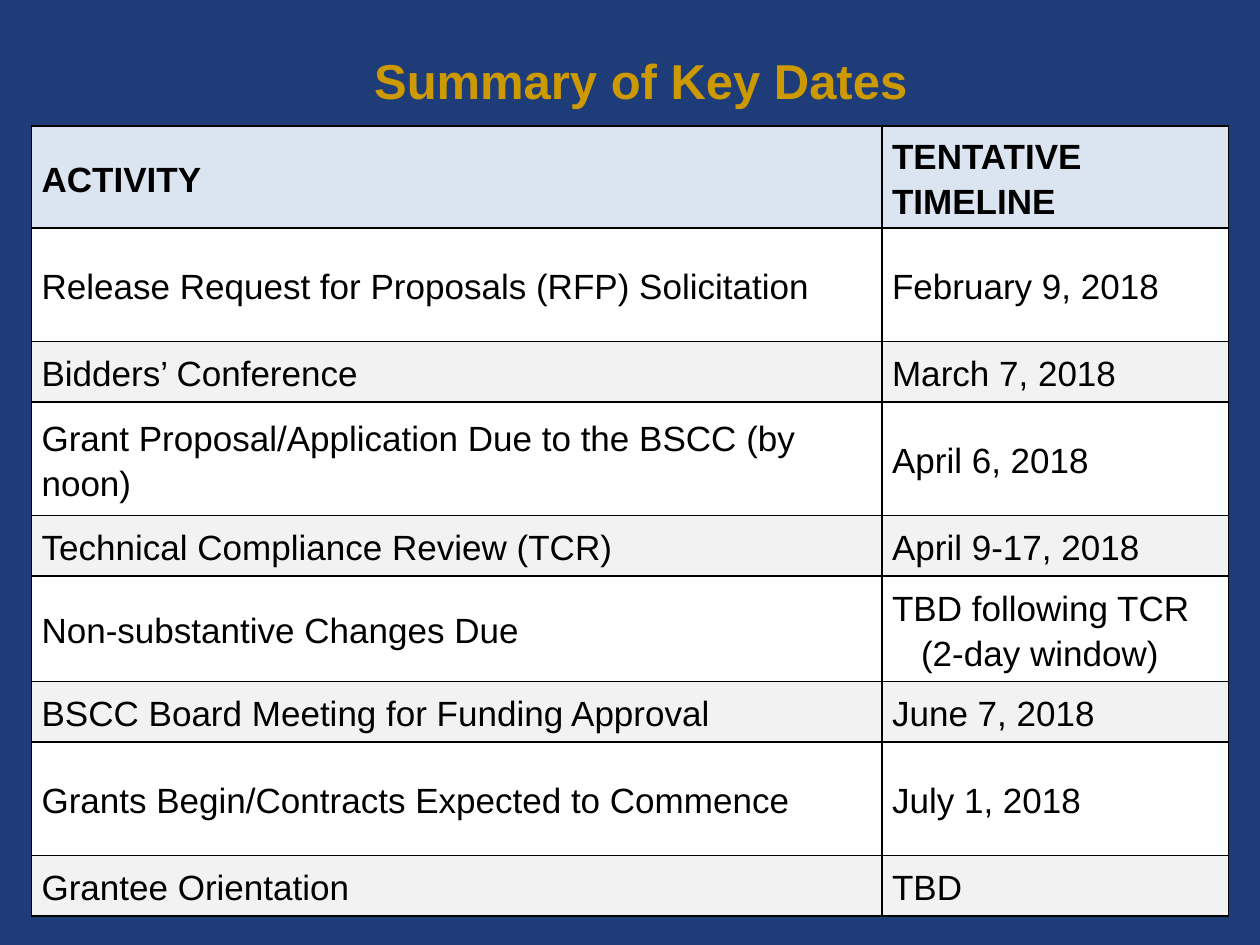
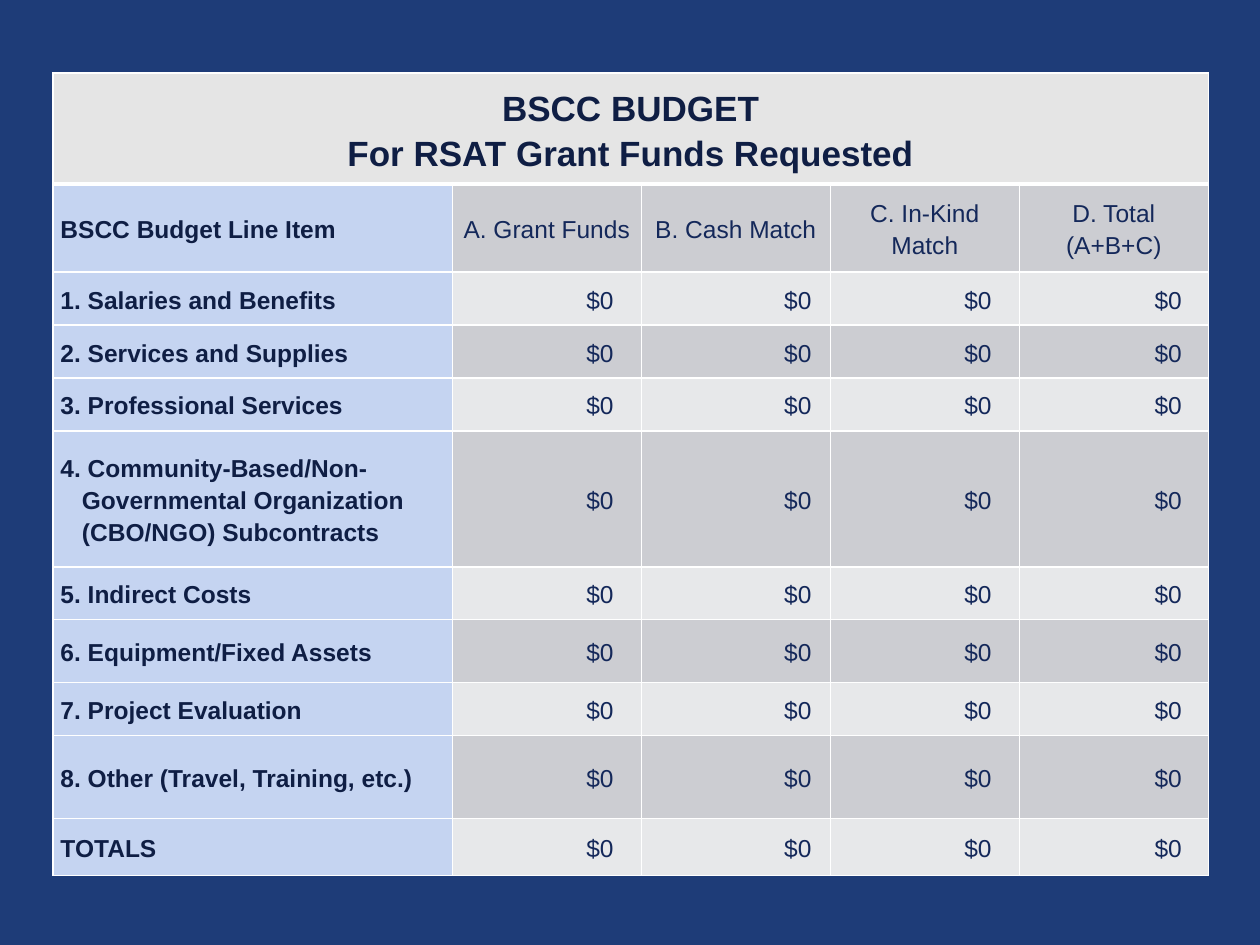
"""Build two slides: a table of key dates and a budget table."""
from lxml import etree
from pptx import Presentation
from pptx.dml.color import RGBColor
from pptx.enum import text
from pptx.oxml import ns
from pptx.util import Inches, Pt

COLORS = {
    "background": "1E3C78", "title": "CC9900", "black": "000000", "white": "FFFFFF",
    "date_head": "DBE5F1", "date_band": "F2F2F2",
    "budget_head": "E5E5E5", "item": "C5D4F1", "dark_band": "CCCDD2",
    "light_band": "E7E8EA", "navy": "0F1E44", "blue": "14285A",
}
FONT = "Arial"
LEFT, CENTER, RIGHT, JUSTIFY = (
    text.PP_ALIGN.LEFT, text.PP_ALIGN.CENTER, text.PP_ALIGN.RIGHT, text.PP_ALIGN.JUSTIFY)

DATES_TITLE = "Summary of Key Dates"
DATES = [
    ("ACTIVITY", "TENTATIVE TIMELINE"),
    ("Release Request for Proposals (RFP) Solicitation", "February 9, 2018"),
    ("Bidders’ Conference", "March 7, 2018"),
    ("Grant Proposal/Application Due to the BSCC (by noon)", "April 6, 2018"),
    ("Technical Compliance Review (TCR)", "April 9-17, 2018"),
    ("Non-substantive Changes Due", "TBD following TCR\n(2-day window)"),
    ("BSCC Board Meeting for Funding Approval", "June 7, 2018"),
    ("Grants Begin/Contracts Expected to Commence", "July 1, 2018"),
    ("Grantee Orientation", "TBD"),
]
DATE_WIDTHS = [6.75, 2.75]
DATE_HEIGHTS = [0.81, 0.9, 0.48, 0.9, 0.48, 0.84, 0.48, 0.9, 0.48]

BUDGET_TITLE = "BSCC BUDGET\nFor RSAT Grant Funds Requested"
BUDGET_HEADS = ["BSCC Budget Line Item", "A. Grant Funds", "B. Cash Match",
                "C. In-Kind Match", "D. Total (A+B+C)"]
BUDGET_ITEMS = [
    "1. Salaries and Benefits",
    "2. Services and Supplies",
    "3. Professional Services",
    "4. Community-Based/Non-Governmental Organization (CBO/NGO) Subcontracts",
    "5. Indirect Costs",
    "6. Equipment/Fixed Assets",
    "7. Project Evaluation",
    "8. Other (Travel, Training, etc.)",
    "TOTALS",
]
AMOUNT = "$0"
WRAPPED_ITEM = 4
BUDGET_WIDTHS = [3.17] + [1.5] * 4
BUDGET_HEIGHTS = [0.88, 0.7, 0.42, 0.42, 0.42, 1.08, 0.42, 0.5, 0.42, 0.66, 0.45]
AMOUNT_INSETS = [0.22, 0.15, 0.22, 0.21]


def color(name):
    return RGBColor.from_string(COLORS[name])


def apply(target, values):
    for name, value in values.items():
        setattr(target, name, value)


def format_para(para, align, size, ink, bold):
    para.alignment = align
    apply(para.font, {"name": FONT, "size": Pt(size), "bold": bold})
    para.font.color.rgb = color(ink)


def indent(para, left, first=0):
    properties = para._p.get_or_add_pPr()
    properties.set("marL", str(Inches(left)))
    properties.set("indent", str(Inches(first)))


def set_borders(cell, ink, **widths):
    properties = cell._tc.get_or_add_tcPr()
    for place, side in enumerate("LRTB"):
        line = etree.Element(ns.qn(f"a:ln{side}"), w=str(Pt(widths.get(side, 1))))
        fill = etree.SubElement(line, ns.qn("a:solidFill"))
        etree.SubElement(fill, ns.qn("a:srgbClr"), val=COLORS[ink])
        properties.insert(place, line)


def add_grid(page, left, top, widths, heights):
    frame = page.shapes.add_table(
        len(heights), len(widths), Inches(left), Inches(top),
        Inches(sum(widths)), Inches(sum(heights)))
    table = frame.table
    apply(table, {"first_row": False, "horz_banding": False})
    for column, width in zip(table.columns, widths):
        column.width = Inches(width)
    for row, height in zip(table.rows, heights):
        row.height = Inches(height)
    return table


def fill_cell(cell, words, fill, insets, **style):
    cell.fill.solid()
    cell.fill.fore_color.rgb = color(fill)
    sides = ("margin_left", "margin_top", "margin_right", "margin_bottom")
    apply(cell, dict(zip(sides, map(Inches, insets))))
    cell.vertical_anchor = text.MSO_ANCHOR.MIDDLE
    cell.text_frame.text = words
    for para in cell.text_frame.paragraphs:
        para.line_spacing = 1.15
        format_para(para, **style)


def build_dates(deck):
    page = deck.slides.add_slide(deck.slide_layouts[5])
    title = page.shapes.title
    apply(title, {"left": Inches(0.92), "top": Inches(0.5),
                  "width": Inches(8.33), "height": Inches(0.42)})
    frame = title.text_frame
    frame.text = DATES_TITLE
    apply(frame, {"vertical_anchor": text.MSO_ANCHOR.BOTTOM,
                  "auto_size": text.MSO_AUTO_SIZE.NONE})
    format_para(frame.paragraphs[0], CENTER, 28, "title", True)

    table = add_grid(page, 0.25, 1, DATE_WIDTHS, DATE_HEIGHTS)
    for r, row in enumerate(DATES):
        fill = "date_head" if r == 0 else "white" if r % 2 else "date_band"
        for c, words in enumerate(row):
            cell = table.cell(r, c)
            fill_cell(cell, words, fill, (0.08, 0.03, 0.08, 0.03),
                      align=JUSTIFY if c or r == 0 else LEFT,
                      size=20, ink="black", bold=r == 0)
            set_borders(cell, "black")
            for para in cell.text_frame.paragraphs[1:]:
                indent(para, 0.23)


def build_budget(deck):
    page = deck.slides.add_slide(deck.slide_layouts[6])
    table = add_grid(page, 0.42, 0.58, BUDGET_WIDTHS, BUDGET_HEIGHTS)
    rows = [BUDGET_HEADS] + [[item] + [AMOUNT] * 4 for item in BUDGET_ITEMS]
    for c in range(len(BUDGET_WIDTHS)):
        set_borders(table.cell(0, c), "white", B=3)
    table.cell(0, 0).merge(table.cell(0, len(BUDGET_WIDTHS) - 1))
    fill_cell(table.cell(0, 0), BUDGET_TITLE, "budget_head", (0.06, 0, 0.06, 0),
              align=CENTER, size=20, ink="navy", bold=True)

    for r, row in enumerate(rows):
        band = "light_band" if r % 2 else "dark_band"
        for c, words in enumerate(row):
            cell = table.cell(r + 1, c)
            right = AMOUNT_INSETS[c - 1] if r and c else 0.06
            if c == 0:
                style = {"align": LEFT if r == WRAPPED_ITEM else JUSTIFY,
                         "ink": "navy", "bold": True}
            else:
                style = {"align": RIGHT if r else CENTER, "ink": "blue", "bold": False}
            fill_cell(cell, words, band if c else "item", (0.06, 0, right, 0),
                      size=14, **style)
            set_borders(cell, "white", T=1 if r else 3)
    wrapped = table.cell(WRAPPED_ITEM + 1, 0)
    indent(wrapped.text_frame.paragraphs[0], 0.17, -0.17)


def main():
    deck = Presentation()
    apply(deck, {"slide_width": Inches(10), "slide_height": Inches(7.5)})
    background = deck.slide_master.background.fill
    background.solid()
    background.fore_color.rgb = color("background")
    build_dates(deck)
    build_budget(deck)
    deck.save("out.pptx")


if __name__ == "__main__":
    main()
